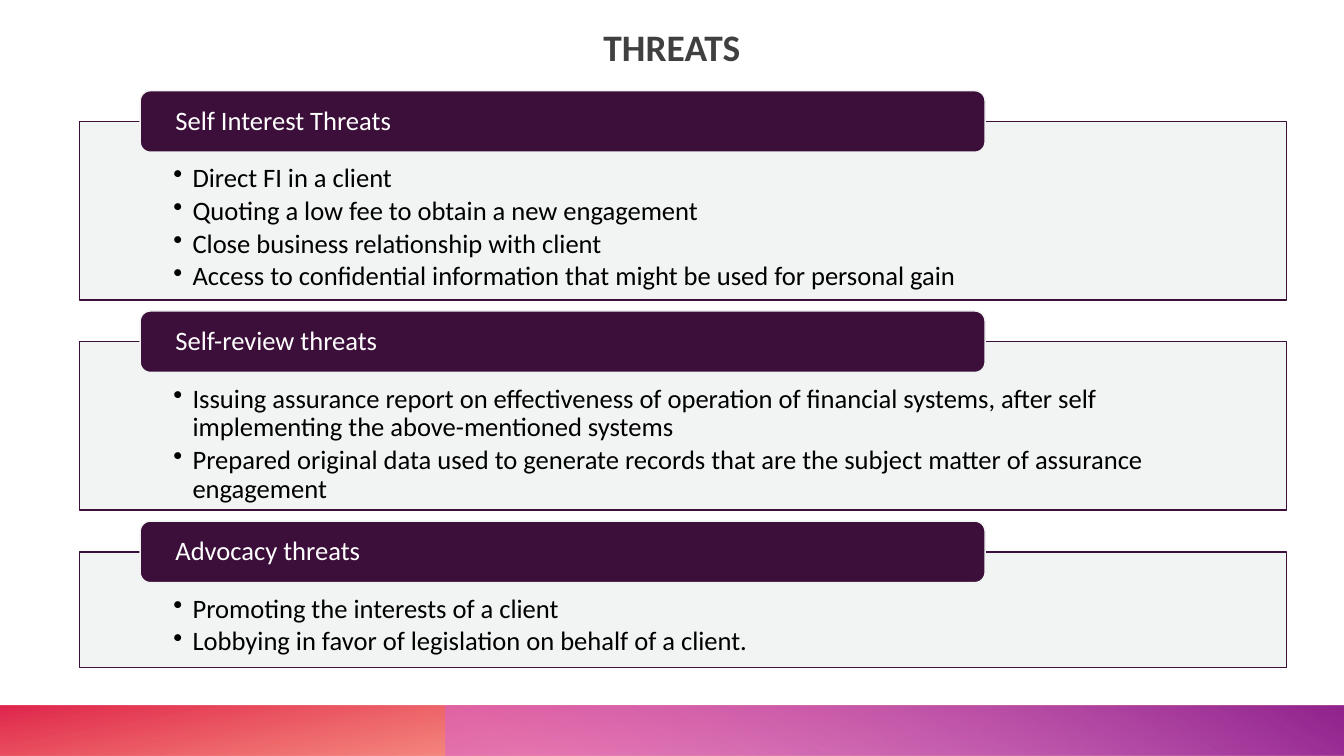
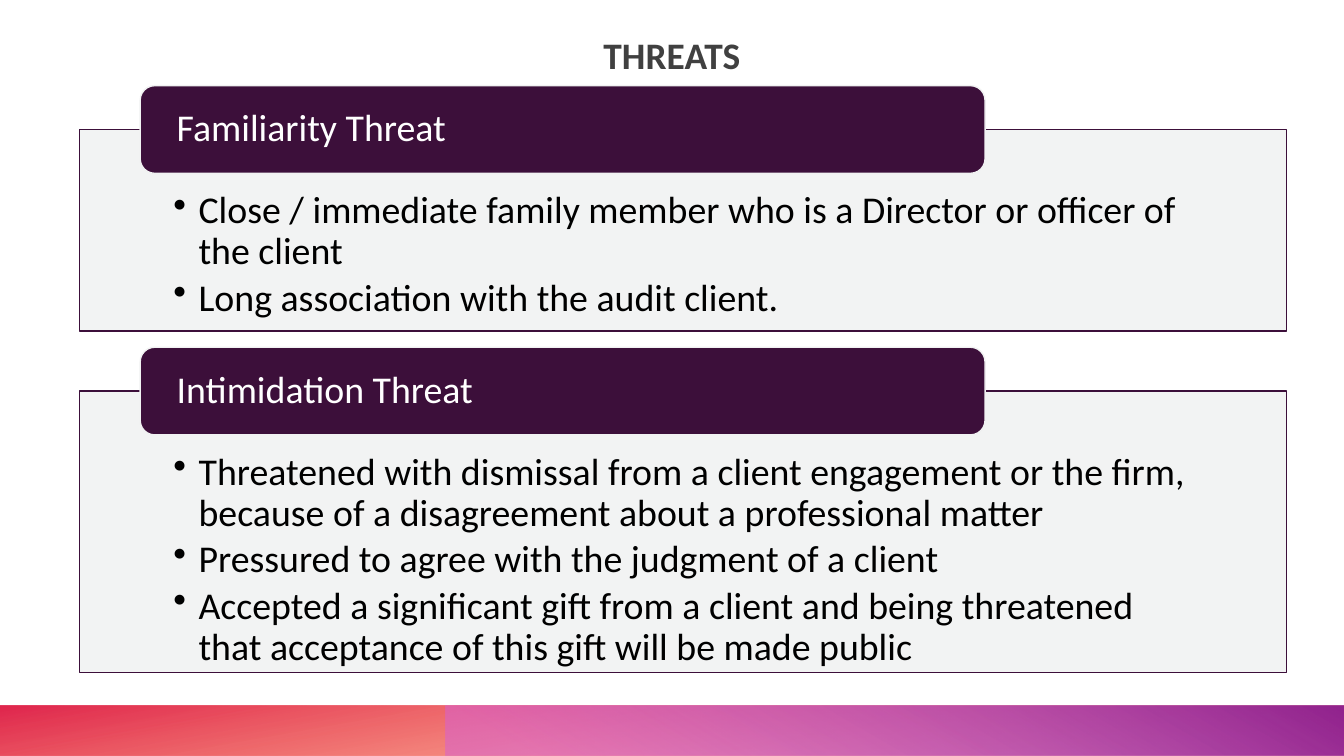
import lxml.etree
import pptx
import pptx.dml.color
import pptx.enum.shapes
import pptx.enum.text
import pptx.oxml.ns
import pptx.util

Inches, Pt = pptx.util.Inches, pptx.util.Pt
qn = pptx.oxml.ns.qn
SHAPE = pptx.enum.shapes.MSO_SHAPE
ALIGN = pptx.enum.text.PP_ALIGN
ANCHOR = pptx.enum.text.MSO_ANCHOR

# Content
SLIDES = [
    {
        "title": "THREATS", "title_height": 0.52, "title_spacing": 1.1,
        "size": 19, "top": 0.9, "header": 0.61, "gap": 0.11,
        "inset": 0.43, "indent": 0.19,
        "panels": [
            ("Self Interest Threats", 1.77, [
                "Direct FI in a client",
                "Quoting a low fee to obtain a new engagement",
                "Close business relationship with client",
                "Access to confidential information that might be used for personal gain",
            ]),
            ("Self-review threats", 1.67, [
                "Issuing assurance report on effectiveness of operation of financial systems, "
                "after self implementing the above-mentioned systems",
                "Prepared original data used to generate records that are the subject matter "
                "of assurance engagement",
            ]),
            ("Advocacy threats", 1.15, [
                "Promoting the interests of a client",
                "Lobbying in favor of legislation on behalf of a client.",
            ]),
        ],
    },
    {
        "title": "THREATS", "title_height": 0.63, "title_spacing": 1.2,
        "size": 27, "top": 0.85, "header": 0.87, "gap": 0.16,
        "inset": 0.61, "indent": 0.25,
        "panels": [
            ("Familiarity Threat", 2, [
                "Close / immediate family member who is a Director or officer of the client",
                "Long association with the audit client.",
            ]),
            ("Intimidation Threat", 2.79, [
                "Threatened with dismissal from a client engagement or the firm, "
                "because of a disagreement about a professional matter",
                "Pressured to agree with the judgment of a client",
                "Accepted a significant gift from a client and being threatened "
                "that acceptance of this gift will be made public",
            ]),
        ],
    },
]

# Shared style
WIDTH, HEIGHT = 13.33, 7.5
FONT = "Calibri"
COLORS = {"title": "404040", "plum": "3C0F3A", "panel": "F1F2F2",
          "text": "000000", "white": "FFFFFF"}
# Each band: left, rotation, clockwise gradient angle, stops (position, colour, opacity)
BANDS = [
    (0, 180, 100, [(0.14, "FE4A00", 28), (1, "DA002F", 85)]),
    (4.42, 0, 240, [(0.09, "D861D4", 55), (0.99, "92248E", 100)]),
]
BAND_HEIGHT = 0.5
PANEL_LEFT, PANEL_WIDTH = 0.79, 11.97
HEADER_LEFT, HEADER_WIDTH = 1.39, 8.38


def rgb(name):
    return pptx.dml.color.RGBColor.from_string(COLORS.get(name, name))


def set_all(target, values):
    for name, value in values.items():
        setattr(target, name, value)


def set_opacity(color_element, percent):
    alpha = lxml.etree.SubElement(color_element, qn("a:alpha"))
    alpha.set("val", str(percent * 1000))


def add_block(page, kind, left, top, width, height):
    box = page.shapes.add_shape(kind, Inches(left), Inches(top), Inches(width), Inches(height))
    box.shadow.inherit = False
    return box


def paint(box, fill, line):
    box.fill.solid()
    box.fill.fore_color.rgb = rgb(fill)
    box.line.color.rgb = rgb(line)
    box.line.width = Pt(1)


def set_frame(box, anchor, left=0, top=0, right=0, bottom=0):
    set_all(box.text_frame, {
        "word_wrap": True, "auto_size": pptx.enum.text.MSO_AUTO_SIZE.NONE,
        "vertical_anchor": anchor,
        "margin_left": Inches(left), "margin_top": Inches(top),
        "margin_right": Inches(right), "margin_bottom": Inches(bottom),
    })


def write(para, text, size, color, bold=False, **layout):
    set_all(para, layout)
    span = para.add_run()
    span.text = text
    set_all(span.font, {"name": FONT, "size": Pt(size), "bold": bold})
    span.font.color.rgb = rgb(color)


def add_bullet(para, indent):
    props = para._p.get_or_add_pPr()
    props.set("marL", str(Inches(indent)))
    props.set("indent", str(-Inches(indent)))
    lxml.etree.SubElement(props, qn("a:buChar")).set("char", "•")


def add_bands(page):
    for left, rotation, angle, stops in BANDS:
        band = add_block(page, SHAPE.RECTANGLE, left, HEIGHT - BAND_HEIGHT,
                         WIDTH - left, BAND_HEIGHT)
        band.rotation = rotation
        band.element.spPr.find(qn("a:xfrm")).set("flipH", "1")
        band.line.fill.background()
        band.fill.gradient()
        band.fill.gradient_angle = 360 - angle
        for stop, (position, color, _) in zip(band.fill.gradient_stops, stops):
            stop.position = position
            stop.color.rgb = rgb(color)
        tints = band.element.spPr.find(qn("a:gradFill")).iter(qn("a:srgbClr"))
        for tint, (_, _, opacity) in zip(list(tints), stops):
            set_opacity(tint, opacity)


def add_title(page, content):
    title = page.shapes.title
    set_all(title, {"left": 0, "top": Inches(0.18), "width": Inches(WIDTH),
                    "height": Inches(content["title_height"])})
    set_frame(title, ANCHOR.MIDDLE)
    write(title.text_frame.paragraphs[0], content["title"], 26.7, "title", bold=True,
          alignment=ALIGN.CENTER, line_spacing=content["title_spacing"], space_before=Pt(10))


def add_panel(page, content, top, heading, height, points):
    size, header_height = content["size"], content["header"]

    # Outlined panel with bullets
    panel = add_block(page, SHAPE.RECTANGLE, PANEL_LEFT, top + header_height / 2,
                      PANEL_WIDTH, height)
    paint(panel, "panel", "plum")
    set_opacity(panel.element.spPr.find(qn("a:solidFill"))[0], 90)
    set_frame(panel, ANCHOR.TOP, 0.93, content["inset"], 0.93, 0.15)
    frame = panel.text_frame
    for index, point in enumerate(points):
        para = frame.add_paragraph() if index else frame.paragraphs[0]
        write(para, point, size, "text", alignment=ALIGN.LEFT,
              line_spacing=0.9, space_after=Pt(0.15 * size))
        add_bullet(para, content["indent"])

    # Heading tab over the panel's top edge
    header = add_block(page, SHAPE.ROUNDED_RECTANGLE, HEADER_LEFT, top,
                       HEADER_WIDTH, header_height)
    paint(header, "plum", "panel")
    # A rounded rectangle insets its text by about 0.05 of its height
    side = 0.32
    set_frame(header, ANCHOR.MIDDLE, side, 0, side, 0)
    write(header.text_frame.paragraphs[0], heading, size, "white",
          alignment=ALIGN.LEFT, line_spacing=0.9)


def main():
    deck = pptx.Presentation()
    deck.slide_width, deck.slide_height = Inches(WIDTH), Inches(HEIGHT)
    for content in SLIDES:
        page = deck.slides.add_slide(deck.slide_layouts[5])
        add_bands(page)
        add_title(page, content)
        top = content["top"]
        for heading, height, points in content["panels"]:
            add_panel(page, content, top, heading, height, points)
            top += content["header"] / 2 + height + content["gap"]
    deck.save("out.pptx")


if __name__ == "__main__":
    main()
